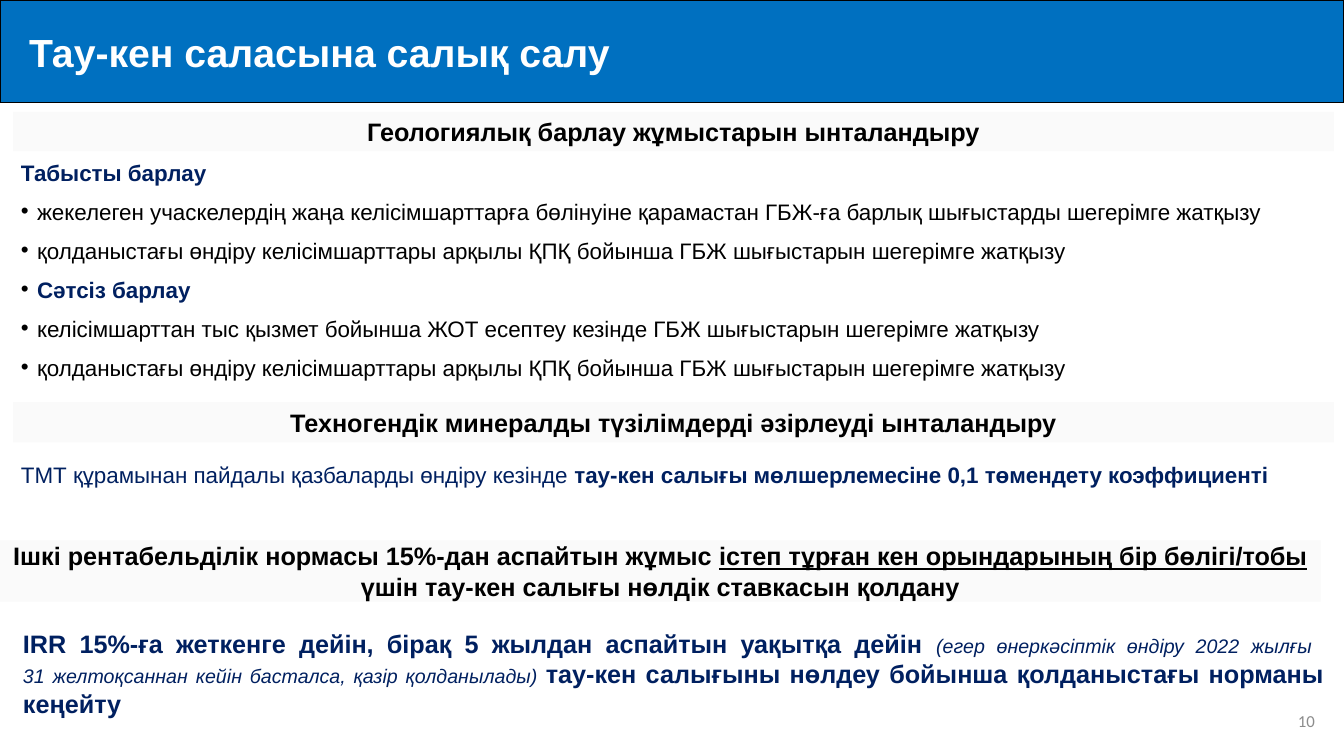
from lxml import etree
from pptx import Presentation
from pptx.dml.color import RGBColor
from pptx.enum.shapes import MSO_SHAPE as SHAPE
from pptx.enum.text import MSO_ANCHOR as ANCHOR, MSO_AUTO_SIZE as AUTO, PP_ALIGN as ALIGN
from pptx.oxml.ns import qn
from pptx.util import Inches, Pt

BLUE = RGBColor(0x00, 0x70, 0xC0)
NAVY = RGBColor(0x00, 0x20, 0x60)
PALE = RGBColor(0xFA, 0xFA, 0xFA)
GRAY = RGBColor(0x8C, 0x8C, 0x8C)
BLACK = RGBColor(0, 0, 0)
WHITE = RGBColor(0xFF, 0xFF, 0xFF)

WIDTH, HEIGHT = 13.33, 7.5
BAND_W = 13.1

EXPLORATION = [
    ("Табысты барлау", True),
    ("жекелеген учаскелердің жаңа келісімшарттарға бөлінуіне қарамастан "
     "ГБЖ-ға барлық шығыстарды шегерімге жатқызу", False),
    ("қолданыстағы өндіру келісімшарттары арқылы ҚПҚ бойынша "
     "ГБЖ шығыстарын шегерімге жатқызу", False),
    ("Сәтсіз барлау", True),
    ("келісімшарттан тыс қызмет бойынша ЖОТ есептеу кезінде "
     "ГБЖ шығыстарын шегерімге жатқызу", False),
    ("қолданыстағы өндіру келісімшарттары арқылы ҚПҚ бойынша "
     "ГБЖ шығыстарын шегерімге жатқызу", False),
]


def add_run(p, text, size, color, bold=False, italic=False, underline=False, font="Arial"):
    r = p.add_run()
    r.text = text
    f = r.font
    f.name, f.size, f.bold, f.italic, f.underline = font, Pt(size), bold, italic, underline
    f.color.rgb = color


def set_indent(p, left, first=0):
    pPr = p._p.get_or_add_pPr()
    pPr.set("marL", str(Inches(left)))
    pPr.set("indent", str(Inches(first)))


def add_bullet(p):
    set_indent(p, 0.16, -0.16)
    pPr = p._p.get_or_add_pPr()
    color = etree.SubElement(pPr, qn("a:buClr"))
    etree.SubElement(color, qn("a:srgbClr"), val=str(BLACK))
    etree.SubElement(pPr, qn("a:buFont"), typeface="Arial")
    etree.SubElement(pPr, qn("a:buChar"), char="•")


def add_bar(slide, box, fill):
    """Add a filled rectangle and return it with its first paragraph."""
    s = slide.shapes.add_shape(SHAPE.RECTANGLE, *map(Inches, box))
    s.shadow.inherit = False
    s.fill.solid()
    s.fill.fore_color.rgb = fill
    s.line.fill.background()
    tf = s.text_frame
    tf.word_wrap = True
    tf.vertical_anchor = ANCHOR.MIDDLE
    return s, tf.paragraphs[0]


def add_text_frame(slide, box):
    tf = slide.shapes.add_textbox(*map(Inches, box)).text_frame
    tf.word_wrap = True
    tf.auto_size = AUTO.SHAPE_TO_FIT_TEXT
    return tf


def add_title(slide, box, text):
    s, p = add_bar(slide, box, BLUE)
    s.line.color.rgb = BLACK
    s.line.width = Pt(1)
    p.alignment = ALIGN.LEFT
    set_indent(p, 0.19)
    add_run(p, text, 28, WHITE, bold=True)


def add_heading(slide, box, parts):
    """Add a pale band whose parts are (text, underlined) pairs."""
    _, p = add_bar(slide, box, PALE)
    p.alignment = ALIGN.CENTER
    for text, underline in parts:
        add_run(p, text, 18, BLACK, bold=True, underline=underline)


def add_exploration(slide, box):
    tf = add_text_frame(slide, box)
    for i, (text, is_label) in enumerate(EXPLORATION):
        p = tf.add_paragraph() if i else tf.paragraphs[0]
        if i:
            add_bullet(p)
        p.alignment = ALIGN.JUSTIFY
        p.line_spacing = 1.14
        p.space_after = Pt(6)
        add_run(p, text, 16, NAVY if is_label else BLACK, bold=is_label)


def add_coefficient(slide, box):
    p = add_text_frame(slide, box).paragraphs[0]
    p.alignment = ALIGN.JUSTIFY
    add_run(p, "ТМТ құрамынан пайдалы қазбаларды өндіру кезінде ", 16, NAVY)
    add_run(p, "тау-кен салығы мөлшерлемесіне 0,1 төмендету коэффициенті", 16, NAVY, bold=True)


def add_zero_rate(slide, box):
    p = add_text_frame(slide, box).paragraphs[0]
    p.alignment = ALIGN.JUSTIFY
    add_run(p, "IRR 15%-ға жеткенге дейін, бірақ 5 жылдан аспайтын уақытқа дейін ",
            18, NAVY, bold=True)
    add_run(p, "(егер өнеркәсіптік өндіру 2022 жылғы ", 14, NAVY, italic=True)
    p.add_line_break()
    add_run(p, "31 желтоқсаннан кейін басталса, қазір қолданылады) ", 14, NAVY, italic=True)
    add_run(p, "тау-кен салығыны нөлдеу бойынша қолданыстағы норманы кеңейту",
            18, NAVY, bold=True)


def add_page_number(slide, box, number):
    tf = add_text_frame(slide, box)
    tf.auto_size = AUTO.NONE
    tf.vertical_anchor = ANCHOR.MIDDLE
    p = tf.paragraphs[0]
    p.alignment = ALIGN.RIGHT
    add_run(p, number, 12, GRAY, font="Calibri")


def main():
    prs = Presentation()
    prs.slide_width, prs.slide_height = Inches(WIDTH), Inches(HEIGHT)
    slide = prs.slides.add_slide(prs.slide_layouts[6])

    add_title(slide, (0, 0, WIDTH, 1.02), "Тау-кен саласына салық салу")
    add_heading(slide, (0.13, 1.11, BAND_W, 0.39),
                [("Геологиялық барлау жұмыстарын ынталандыру", False)])
    add_heading(slide, (0.13, 3.99, BAND_W, 0.4),
                [("Техногендік минералды түзілімдерді әзірлеуді ынталандыру", False)])
    add_exploration(slide, (0.11, 1.49, BAND_W, 2.36))
    add_coefficient(slide, (0.11, 4.53, BAND_W, 0.37))
    add_heading(slide, (0, 5.36, BAND_W, 0.61), [
        ("Ішкі рентабельділік нормасы 15%-дан аспайтын жұмыс ", False),
        ("істеп тұрған кен орындарының бір бөлігі/тобы ", True),
        ("үшін тау-кен салығы нөлдік ставкасын қолдану", False),
    ])
    add_zero_rate(slide, (0.13, 6.18, BAND_W, 1.01))
    add_page_number(slide, (10.14, 6.95, 3, 0.4), "10")
    prs.save("out.pptx")


if __name__ == "__main__":
    main()
